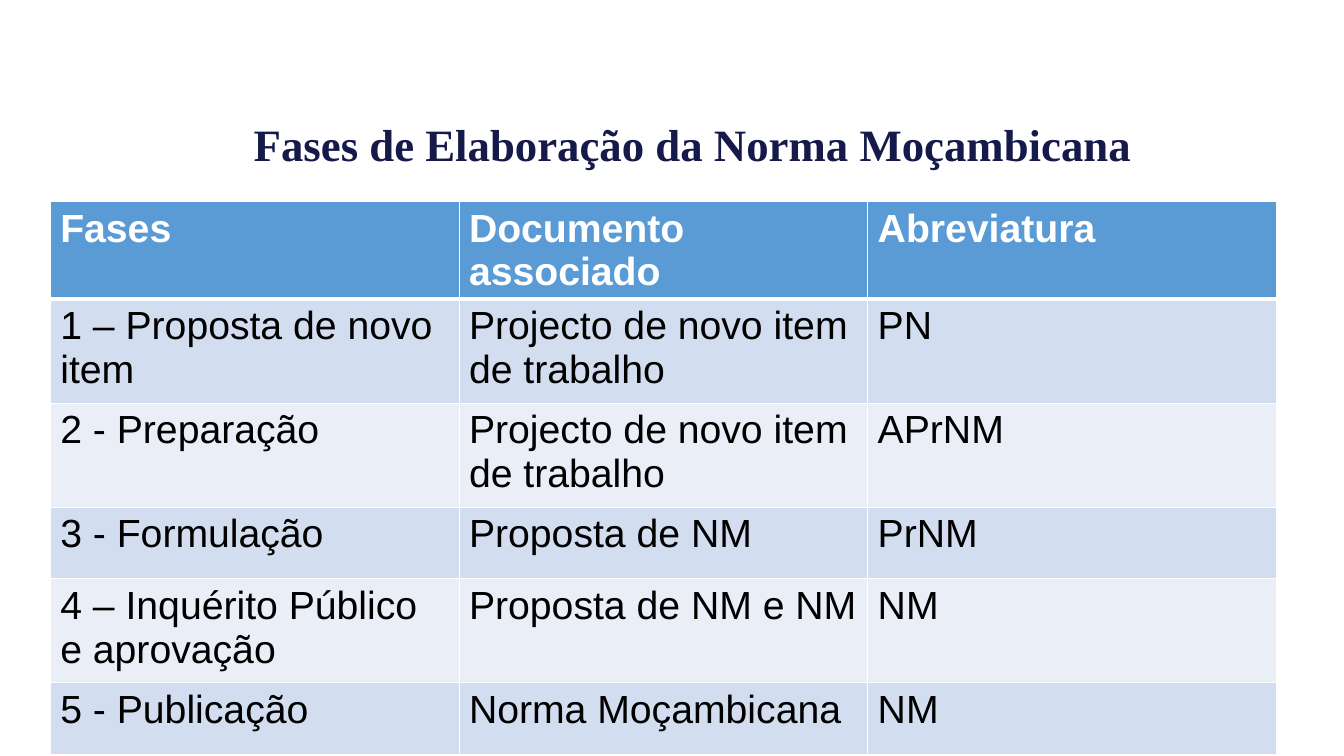
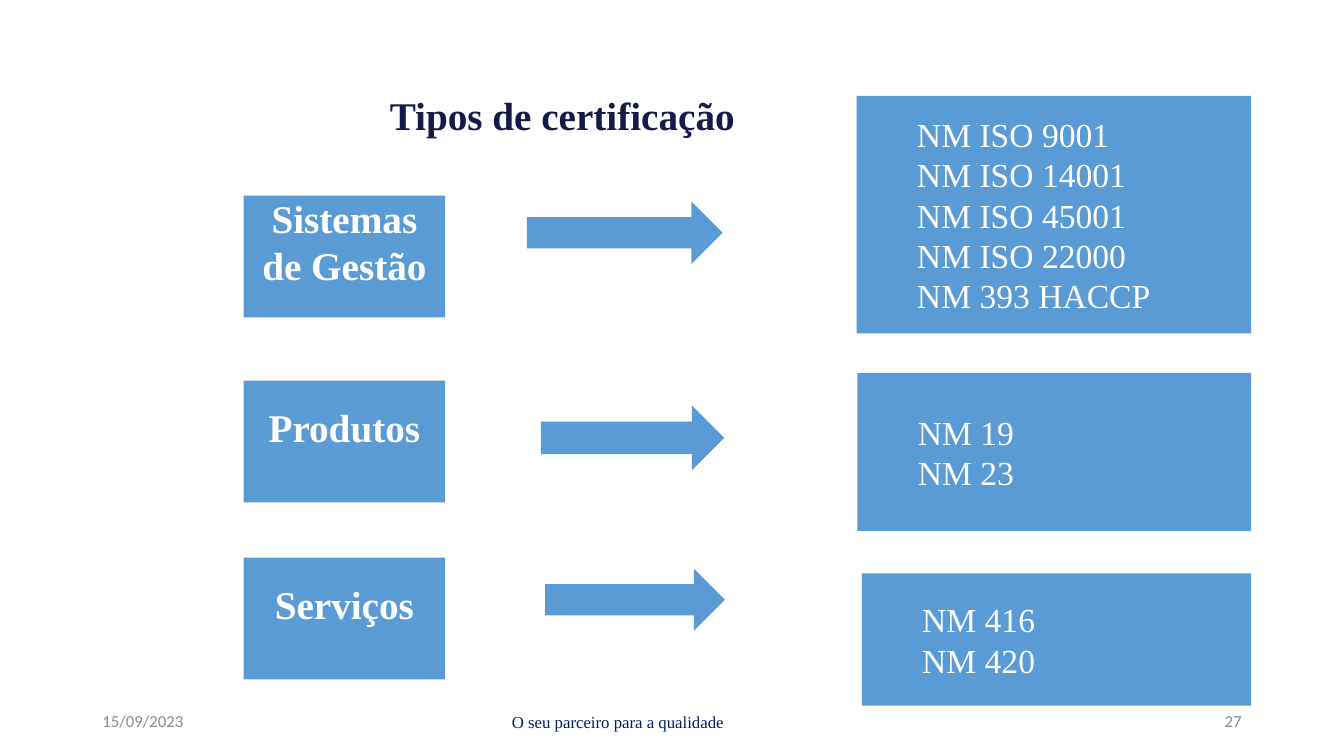
import pptx
import pptx.dml.color
import pptx.enum.shapes
import pptx.enum.text
import pptx.oxml.ns
import pptx.util
from lxml import etree
from pptx.util import Cm

COLORS = {
    "navy": "151A4B",
    "footer": "002060",
    "number": "898989",
    "date": "8C8C8C",
    "blue": "5B9BD5",
    "band_dark": "D2DEEF",
    "band_light": "EAEFF7",
    "white": "FFFFFF",
    "black": "000000",
}
SERIF = "Times New Roman"
ALIGN = pptx.enum.text.PP_ALIGN
ANCHOR = pptx.enum.text.MSO_ANCHOR
SHAPE = pptx.enum.shapes.MSO_SHAPE
TITLE_STYLE = dict(font=SERIF, color="navy", bold=True)


def rgb(name):
    return pptx.dml.color.RGBColor.from_string(COLORS[name])


def write(frame, lines, size, font=SERIF, color="white", bold=False,
          align=ALIGN.LEFT, anchor=ANCHOR.MIDDLE, spacing=1.0):
    frame.word_wrap = True
    frame.auto_size = pptx.enum.text.MSO_AUTO_SIZE.NONE
    frame.vertical_anchor = anchor
    for index, line in enumerate(lines):
        paragraph = frame.paragraphs[0] if index == 0 else frame.add_paragraph()
        paragraph.alignment = align
        paragraph.line_spacing = spacing
        run = paragraph.add_run()
        run.text = line
        run.font.name = font
        run.font.size = pptx.util.Pt(size)
        run.font.bold = bold
        run.font.color.rgb = rgb(color)


deck = pptx.Presentation()
deck.slide_width = Cm(33.87)
deck.slide_height = Cm(19.05)
title_only = deck.slide_layouts[5]

phases_slide = deck.slides.add_slide(title_only)
phases_title = phases_slide.shapes.title
phases_title.left, phases_title.top = Cm(6.14), Cm(2.34)
phases_title.width, phases_title.height = Cm(22.86), Cm(1.9)
rounded_outline = etree.SubElement(phases_title._element.spPr,
                                   pptx.oxml.ns.qn("a:prstGeom"), prst="roundRect")
etree.SubElement(rounded_outline, pptx.oxml.ns.qn("a:avLst"))
write(phases_title.text_frame, ["Fases de Elaboração da Norma Moçambicana"],
      size=32, spacing=1.5, **TITLE_STYLE)

phases = [
    ("Fases", "Documento associado", "Abreviatura"),
    ("1 – Proposta de novo item", "Projecto de novo item de trabalho", "PN"),
    ("2 - Preparação", "Projecto de novo item de trabalho", "APrNM"),
    ("3 - Formulação", "Proposta de NM", "PrNM"),
    ("4 – Inquérito Público e aprovação", "Proposta de NM e NM", "NM"),
    ("5 - Publicação", "Norma Moçambicana", "NM"),
]
row_heights = [1.8, 2.62, 2.62, 1.8, 2.62, 1.8]
column_width = 10.3
phase_table = phases_slide.shapes.add_table(
    len(phases), 3, Cm(1.27), Cm(5.08), Cm(3 * column_width), Cm(sum(row_heights))).table
for column in phase_table.columns:
    column.width = Cm(column_width)

for row, (texts, height) in enumerate(zip(phases, row_heights)):
    phase_table.rows[row].height = Cm(height)
    header = row == 0
    band = "blue" if header else "band_dark" if row % 2 else "band_light"
    border_widths = {"lnL": 1, "lnR": 1, "lnT": 3 if row == 1 else 1, "lnB": 3 if header else 1}
    for column, text in enumerate(texts):
        cell = phase_table.cell(row, column)
        properties = cell._tc.get_or_add_tcPr()
        for side, width in border_widths.items():
            border = etree.SubElement(properties, pptx.oxml.ns.qn("a:" + side),
                                      w=str(pptx.util.Pt(width)))
            border_fill = etree.SubElement(border, pptx.oxml.ns.qn("a:solidFill"))
            etree.SubElement(border_fill, pptx.oxml.ns.qn("a:srgbClr"), val=COLORS["white"])
        cell.fill.solid()
        cell.fill.fore_color.rgb = rgb(band)
        cell.margin_left = cell.margin_right = Cm(0.25)
        cell.margin_top = cell.margin_bottom = Cm(0.13)
        write(cell.text_frame, [text], size=28, font="Arial", bold=header,
              color="white" if header else "black", anchor=ANCHOR.TOP)

types_slide = deck.slides.add_slide(title_only)
types_title = types_slide.shapes.title
types_title.left, types_title.top = Cm(4.42), Cm(2.41)
types_title.width, types_title.height = Cm(19.5), Cm(1.12)
write(types_title.text_frame, ["Tipos de certificação"],
      size=28, align=ALIGN.CENTER, spacing=0.9, **TITLE_STYLE)

certifications = [
    ("Sistemas de Gestão", 4.93, (13.28, 5.08, 4.93, 1.57), (21.59, 2.42, 9.94, 5.98),
     ["NM ISO 9001", "NM ISO 14001", "NM ISO 45001", "NM ISO 22000", "NM 393 HACCP"]),
    ("Produtos", 9.59, (13.63, 10.22, 4.62, 1.63), (21.61, 9.4, 9.92, 3.98),
     ["NM 19", "NM 23"]),
    ("Serviços", 14.05, (13.74, 14.33, 4.53, 1.57), (21.72, 14.45, 9.81, 3.33),
     ["NM 416", "NM 420"]),
]
for category, category_top, arrow_place, standards_place, standards in certifications:
    parts = []
    for preset, place in [
        (SHAPE.RECTANGLE, (6.14, category_top, 5.08, 3.07)),
        (SHAPE.RIGHT_ARROW, arrow_place),
        (SHAPE.RECTANGLE, standards_place),
    ]:
        part = types_slide.shapes.add_shape(preset, *[Cm(length) for length in place])
        part.shadow.inherit = False
        part.fill.solid()
        part.fill.fore_color.rgb = rgb("blue")
        part.line.fill.background()
        parts.append(part)
    category_frame, standards_frame = parts[0].text_frame, parts[2].text_frame
    category_frame.margin_top, category_frame.margin_bottom = Cm(0.05), Cm(0.8)
    standards_frame.margin_left = Cm(1.52)
    write(category_frame, [category], size=28, bold=True, align=ALIGN.CENTER)
    write(standards_frame, standards, size=24)

for text, place, font, color, align in [
    ("15/09/2023", (2.33, 17.65, 7.62, 1.02), "Calibri", "date", ALIGN.LEFT),
    ("O seu parceiro para a qualidade", (9.86, 17.86, 11.43, 0.64), SERIF, "footer", ALIGN.CENTER),
    ("27", (23.92, 17.65, 7.62, 1.02), "Calibri", "number", ALIGN.RIGHT),
]:
    footer = types_slide.shapes.add_textbox(*[Cm(length) for length in place])
    write(footer.text_frame, [text], size=12, font=font, color=color, align=align)

deck.save("out.pptx")
